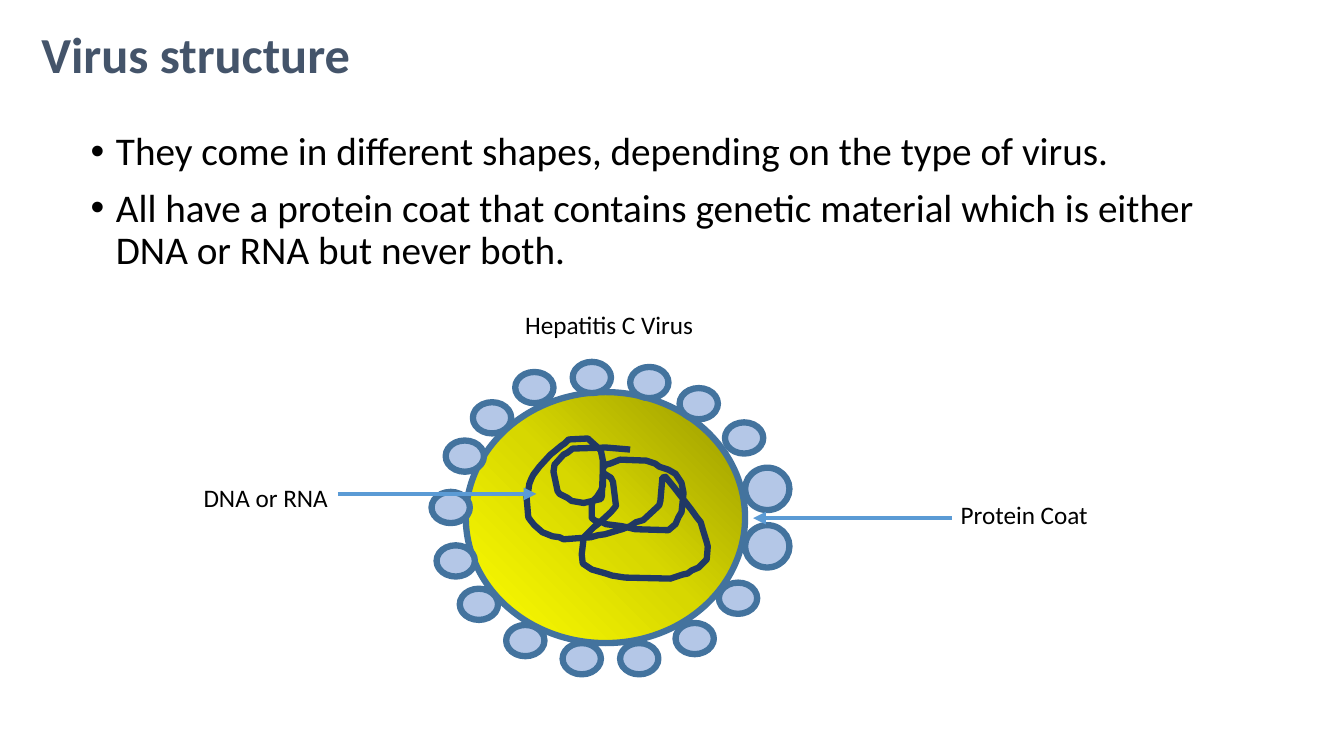
from copy import deepcopy
from dataclasses import dataclass
from typing import Any

from pptx import Presentation
from pptx.dml.color import RGBColor
from pptx.enum.shapes import MSO_CONNECTOR, MSO_SHAPE
from pptx.enum.text import MSO_ANCHOR, MSO_AUTO_SIZE, PP_ALIGN
from pptx.oxml.ns import qn
from pptx.oxml.xmlchemy import OxmlElement
from pptx.util import Inches, Pt

ELLIPSE = MSO_SHAPE.OVAL
STRAIGHT = MSO_CONNECTOR.STRAIGHT
LEFT = PP_ALIGN.LEFT
TOP, MIDDLE = MSO_ANCHOR.TOP, MSO_ANCHOR.MIDDLE
FIXED, GROW = MSO_AUTO_SIZE.NONE, MSO_AUTO_SIZE.SHAPE_TO_FIT_TEXT

BLACK = RGBColor(0x00, 0x00, 0x00)
SLATE = RGBColor(0x44, 0x54, 0x6A)
OUTLINE_BLUE = RGBColor(0x43, 0x73, 0x9E)
PALE_BLUE = RGBColor(0xB4, 0xC7, 0xE7)
ARROW_BLUE = RGBColor(0x5B, 0x9B, 0xD5)
NAVY = RGBColor(0x20, 0x38, 0x64)
OLIVE = RGBColor(0x97, 0x97, 0x00)
MUSTARD = RGBColor(0xD7, 0xD7, 0x00)
YELLOW = RGBColor(0xFF, 0xFF, 0x00)

CELL = Inches(0.01)
COLUMNS, ROWS = 1333, 750
THICK, THIN = Pt(4.5), Pt(3)

TITLE_FONT = {"name": "Calibri", "size": Pt(36), "bold": True}
BODY_FONT = {"name": "Calibri", "size": Pt(28)}
LABEL_FONT = {"name": "Calibri", "size": Pt(18)}
TITLE_FRAME = {"vertical_anchor": MIDDLE, "auto_size": FIXED, "word_wrap": True}
BODY_FRAME = {"vertical_anchor": TOP, "auto_size": FIXED, "word_wrap": True}
LABEL_FRAME = {"auto_size": GROW, "word_wrap": False}
TITLE_PARAGRAPH = {"alignment": LEFT, "line_spacing": 0.9, "space_before": Pt(0)}
BODY_PARAGRAPH = {"alignment": LEFT, "line_spacing": 0.9, "space_before": Pt(10)}
BULLET_INDENT = {"marL": Inches(0.25), "indent": -Inches(0.25)}


@dataclass(frozen=True)
class Area:
    column: int
    row: int
    columns: int
    rows: int

    def lengths(self) -> list[int]:
        return [CELL * cells for cells in (self.column, self.row, self.columns, self.rows)]


@dataclass(frozen=True)
class Label:
    text: str
    area: Area


@dataclass(frozen=True)
class Arrow:
    start: int
    end: int
    row: int


TITLE = "Virus structure"
FACTS = [
    "They come in different shapes, depending on the type of virus.",
    "All have a protein coat that contains genetic material which is either DNA or RNA but never both.",
]
TITLE_AREA = Area(31, -16, 1150, 145)
BODY_AREA = Area(80, 126, 1150, 476)
CORE_AREA = Area(462, 389, 277, 249)
CORE_STOPS = [(0, OLIVE), (0.5, MUSTARD), (1, YELLOW)]

LARGE_PROTEINS = [(739, 521), (739, 464)]
SMALL_PROTEINS = [
    (719, 419), (674, 385), (625, 364), (568, 359), (511, 369),
    (469, 399), (442, 437), (428, 488), (433, 541), (456, 584),
    (502, 620), (558, 638), (615, 638), (670, 618), (713, 578),
]
PROTEINS = [Area(column, row, 44, 42) for column, row in LARGE_PROTEINS] + [
    Area(column, row, 38, 31) for column, row in SMALL_PROTEINS
]
STRAND = [
    (625, 446), (601, 444), (568, 445), (563, 449), (559, 451), (550, 461),
    (549, 468), (553, 487), (555, 490), (563, 494), (567, 497), (579, 499),
    (596, 495), (597, 492), (598, 464), (601, 461), (605, 460), (615, 456),
    (641, 457), (650, 460), (654, 463), (663, 466), (670, 470), (676, 479),
    (678, 489), (676, 508), (673, 513), (670, 520), (663, 526), (630, 525),
    (617, 522), (601, 520), (597, 518), (591, 517), (587, 514), (587, 501),
    (588, 497), (592, 493), (596, 487), (598, 482), (598, 457), (596, 447),
    (593, 444), (583, 435), (564, 436), (560, 440), (557, 442), (551, 447),
    (546, 451), (535, 463), (529, 471), (527, 475), (525, 480), (524, 487),
    (522, 490), (524, 513), (526, 516), (530, 521), (538, 528), (543, 530),
    (548, 532), (555, 533), (559, 535), (586, 533), (593, 531), (600, 530),
    (617, 525), (625, 522), (631, 518), (638, 516), (651, 504), (654, 501),
    (655, 497), (657, 474), (660, 473), (669, 484), (686, 506), (691, 513),
    (695, 518), (697, 525), (701, 538), (702, 542), (701, 555), (693, 563),
    (686, 566), (682, 569), (677, 570), (665, 574), (620, 573), (607, 571),
    (601, 569), (587, 565), (578, 559), (577, 550), (579, 533), (582, 530),
    (589, 523), (593, 520), (606, 508), (611, 502), (608, 478), (606, 474),
    (598, 469),
]
LABELS = [
    Label("Hepatitis C Virus", Area(511, 302, 189, 40)),
    Label("Protein Coat", Area(943, 490, 148, 40)),
    Label("DNA or RNA", Area(192, 474, 145, 40)),
]
ARROWS = [Arrow(944, 747, 514), Arrow(335, 532, 490)]


def apply_format(target: Any, values: dict[str, Any]) -> None:
    for name, value in values.items():
        setattr(target, name, value)


def place(shape: Any, area: Area) -> None:
    names = ("left", "top", "width", "height")
    apply_format(shape, dict(zip(names, area.lengths())))


def style_line(line: Any, color: RGBColor, width: int) -> None:
    line.color.rgb = color
    line.width = width


def write_paragraph(paragraph: Any, text: str, font: dict[str, Any], color: RGBColor) -> None:
    run = paragraph.add_run()
    run.text = text
    apply_format(run.font, font)
    run.font.color.rgb = color


def fill_title(shape: Any) -> None:
    place(shape, TITLE_AREA)
    apply_format(shape.text_frame, TITLE_FRAME)
    paragraph = shape.text_frame.paragraphs[0]
    apply_format(paragraph, TITLE_PARAGRAPH)
    write_paragraph(paragraph, TITLE, TITLE_FONT, SLATE)


def fill_body(shape: Any) -> None:
    place(shape, BODY_AREA)
    frame = shape.text_frame
    apply_format(frame, BODY_FRAME)
    for index, fact in enumerate(FACTS):
        paragraph = frame.add_paragraph() if index else frame.paragraphs[0]
        apply_format(paragraph, BODY_PARAGRAPH)
        write_paragraph(paragraph, fact, BODY_FONT, BLACK)
        properties = paragraph._p.get_or_add_pPr()
        for name, value in BULLET_INDENT.items():
            properties.set(name, str(int(value)))


def add_ellipse(slide: Any, area: Area) -> Any:
    shape = slide.shapes.add_shape(ELLIPSE, *area.lengths())
    shape.shadow.inherit = False
    style_line(shape.line, OUTLINE_BLUE, THICK)
    return shape


def add_core(slide: Any) -> None:
    fill = (shape := add_ellipse(slide, CORE_AREA)).fill
    fill.gradient()
    fill.gradient_angle = 225
    stop_list = next(shape.element.iter(qn("a:gsLst")))
    stop_list.append(deepcopy(stop_list[0]))
    for stop, (position, color) in zip(fill.gradient_stops, CORE_STOPS):
        stop.position = position
        stop.color.rgb = color


def add_protein(slide: Any, area: Area) -> None:
    fill = add_ellipse(slide, area).fill
    fill.solid()
    fill.fore_color.rgb = PALE_BLUE


def add_strand(slide: Any) -> None:
    builder = slide.shapes.build_freeform(*STRAND[0], scale=CELL)
    builder.add_line_segments(STRAND[1:], close=False)
    shape = builder.convert_to_shape()
    shape.shadow.inherit = False
    shape.fill.background()
    style_line(shape.line, NAVY, THICK)


def add_label(slide: Any, label: Label) -> None:
    frame = slide.shapes.add_textbox(*label.area.lengths()).text_frame
    apply_format(frame, LABEL_FRAME)
    write_paragraph(frame.paragraphs[0], label.text, LABEL_FONT, BLACK)


def add_arrow(slide: Any, arrow: Arrow) -> None:
    row = CELL * arrow.row
    connector = slide.shapes.add_connector(STRAIGHT, CELL * arrow.start, row, CELL * arrow.end, row)
    style_line(connector.line, ARROW_BLUE, THIN)
    head = OxmlElement("a:tailEnd")
    head.set("type", "triangle")
    connector.line._get_or_add_ln().append(head)
    connector.element.spPr.append(OxmlElement("a:effectLst"))


def main() -> None:
    presentation = Presentation()
    presentation.slide_width, presentation.slide_height = CELL * COLUMNS, CELL * ROWS
    slide = presentation.slides.add_slide(presentation.slide_layouts[1])
    fill_title(slide.shapes.title)
    fill_body(slide.placeholders[1])
    add_core(slide)
    for area in PROTEINS:
        add_protein(slide, area)
    add_strand(slide)
    for label in LABELS:
        add_label(slide, label)
    for arrow in ARROWS:
        add_arrow(slide, arrow)
    presentation.save("out.pptx")


if __name__ == "__main__":
    main()
